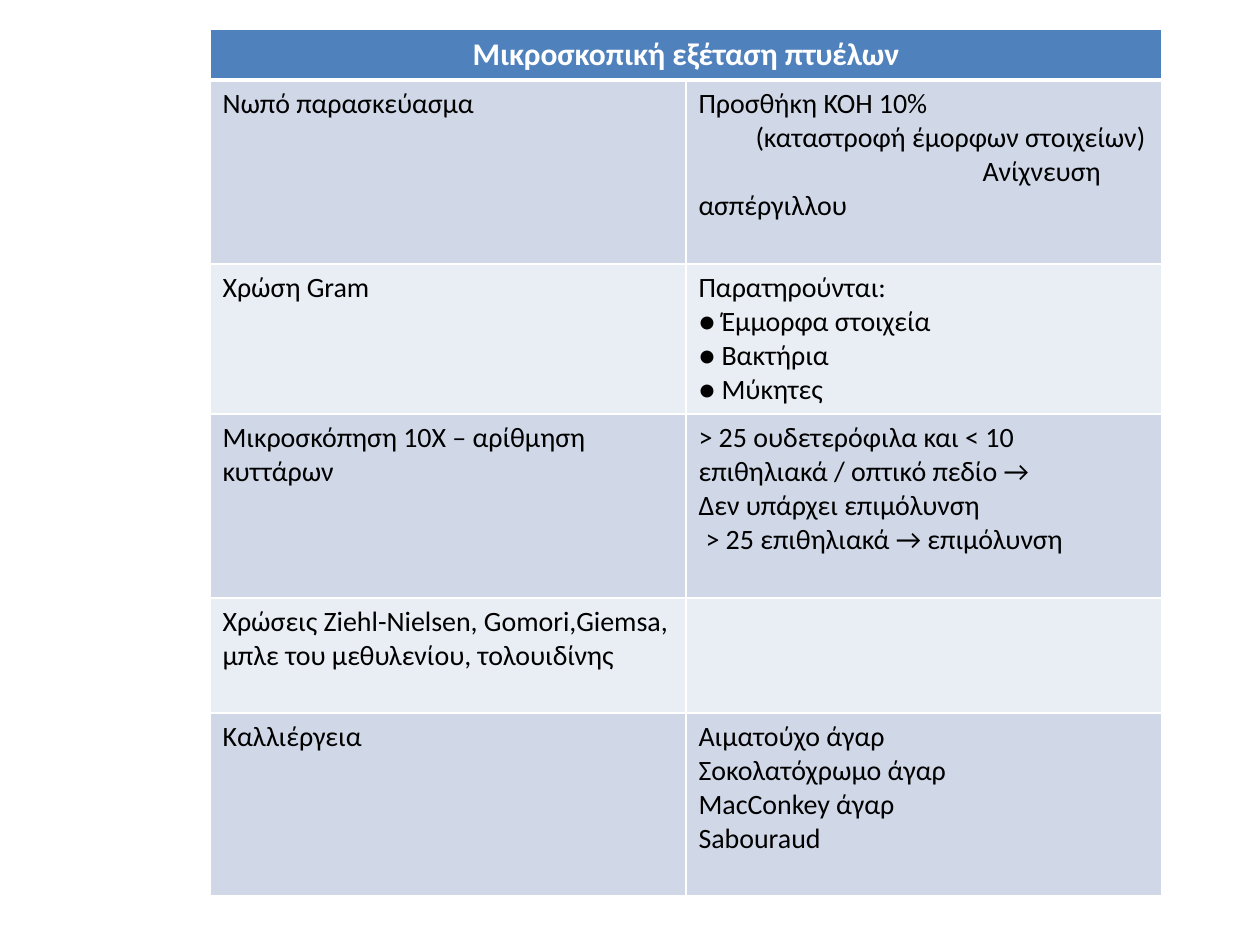
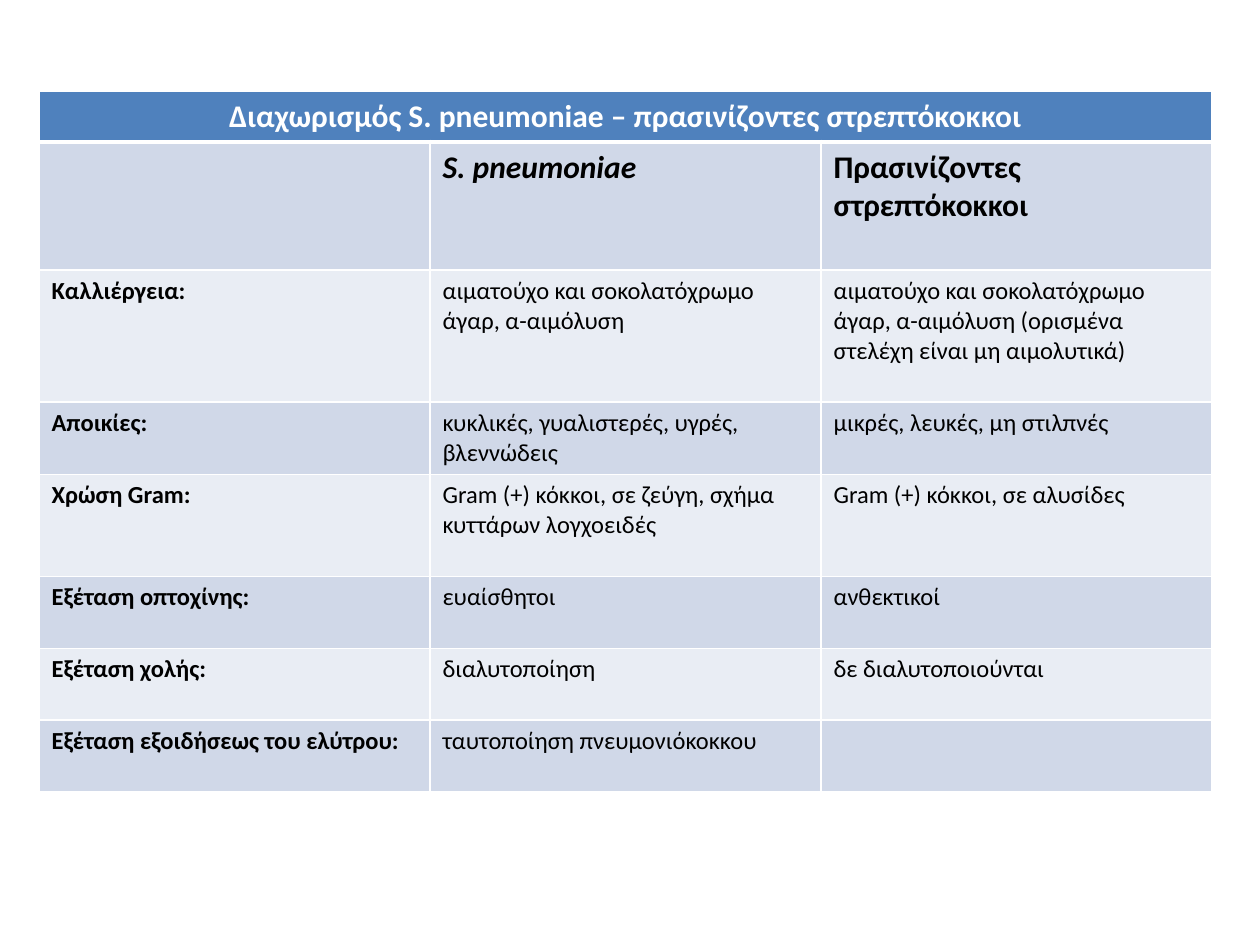
from dataclasses import dataclass
from typing import Optional

from lxml.etree import SubElement
from pptx import Presentation
from pptx.dml.color import RGBColor
from pptx.enum.text import PP_ALIGN as Align
from pptx.oxml.ns import qn
from pptx.util import Emu, Pt

# Scale and shared look
EMU_PER_PX = 914400 / 126
FONT = "Calibri"
WHITE = RGBColor(0xFF, 0xFF, 0xFF)
BLACK = RGBColor(0x00, 0x00, 0x00)
HEADER_BLUE = RGBColor(0x4F, 0x81, 0xBD)
BAND_DARK = RGBColor(0xD0, 0xD8, 0xE8)
BAND_LIGHT = RGBColor(0xE9, 0xED, 0xF4)
THIN, THICK = 1, 3
BULLET_HANG = 23


@dataclass(frozen=True)
class Style:
    size: int
    bold: bool = False
    italic: bool = False
    color: RGBColor = BLACK
    align: Align = Align.LEFT


@dataclass(frozen=True)
class Line:
    text: str
    indent: int = 0
    bullet: bool = False


@dataclass(frozen=True)
class Entry:
    style: Style
    lines: tuple[Line, ...]


@dataclass(frozen=True)
class Row:
    height: int
    entries: tuple[Optional[Entry], ...]


@dataclass(frozen=True)
class Sheet:
    left: int
    top: int
    column_width: int
    title: str
    rows: tuple[Row, ...]


TITLE = Style(18, bold=True, color=WHITE, align=Align.CENTER)
EXAM = Style(16)
SPECIES = Style(18, bold=True, italic=True)
GROUP = Style(18, bold=True)
LABEL = Style(14, bold=True)
FINDING = Style(14)
HEADER_HEIGHT = 51


def px(length: int) -> Emu:
    return Emu(round(length * EMU_PER_PX))


def entry(style: Style, *lines: str | Line) -> Entry:
    return Entry(style, tuple(Line(l) if isinstance(l, str) else l for l in lines))


def exam(height: int, name: str, *details: str | Line) -> Row:
    return Row(height, (entry(EXAM, name), entry(EXAM, *details) if details else None))


def trait(height: int, name: str, *findings: str) -> Row:
    return Row(height, (entry(LABEL, name), *(entry(FINDING, f) for f in findings)))


# Content
SPUTUM = Sheet(210, 29, 476, "Μικροσκοπική εξέταση πτυέλων", (
    exam(184, "Νωπό παρασκεύασμα",
         "Προσθήκη ΚΟΗ 10%",
         Line("(καταστροφή έμορφων στοιχείων)", indent=57),
         Line("Ανίχνευση ασπέργιλλου", indent=284)),
    exam(150, "Χρώση Gram",
         "Παρατηρούνται:",
         Line("Έμμορφα στοιχεία", bullet=True),
         Line("Βακτήρια", bullet=True),
         Line("Μύκητες", bullet=True)),
    exam(184, "Μικροσκόπηση 10Χ – αρίθμηση κυττάρων",
         "> 25 ουδετερόφιλα και < 10 επιθηλιακά / οπτικό πεδίο →",
         "Δεν υπάρχει επιμόλυνση",
         Line("> 25 επιθηλιακά → επιμόλυνση", indent=7)),
    exam(115, "Χρώσεις Ziehl-Nielsen, Gomori,Giemsa, μπλε του μεθυλενίου, τολουιδίνης"),
    exam(183, "Καλλιέργεια",
         "Αιματούχο άγαρ", "Σοκολατόχρωμο άγαρ", "MacConkey άγαρ", "Sabouraud"),
))

STREPTOCOCCI = Sheet(39, 91, 391, "Διαχωρισμός S. pneumoniae – πρασινίζοντες στρεπτόκοκκοι", (
    Row(128, (None, entry(SPECIES, "S. pneumoniae"),
              entry(GROUP, "Πρασινίζοντες στρεπτόκοκκοι"))),
    trait(132, "Καλλιέργεια:",
          "αιματούχο και σοκολατόχρωμο άγαρ, α-αιμόλυση",
          "αιματούχο και σοκολατόχρωμο άγαρ, α-αιμόλυση (ορισμένα στελέχη είναι μη αιμολυτικά)"),
    trait(72, "Αποικίες:",
          "κυκλικές, γυαλιστερές, υγρές, βλεννώδεις", "μικρές, λευκές, μη στιλπνές"),
    trait(102, "Χρώση Gram:",
          "Gram (+) κόκκοι, σε ζεύγη, σχήμα κυττάρων λογχοειδές",
          "Gram (+) κόκκοι, σε αλυσίδες"),
    trait(72, "Εξέταση οπτοχίνης:", "ευαίσθητοι", "ανθεκτικοί"),
    trait(72, "Εξέταση χολής:", "διαλυτοποίηση", "δε διαλυτοποιούνται"),
    trait(72, "Εξέταση εξοιδήσεως του ελύτρου:", "ταυτοποίηση πνευμονιόκοκκου"),
))


# Drawing
def set_borders(cell, top: int, bottom: int) -> None:
    properties = cell._tc.get_or_add_tcPr()
    sides = (("a:lnL", THIN), ("a:lnR", THIN), ("a:lnT", top), ("a:lnB", bottom))
    for position, (side, width) in enumerate(sides):
        edge = SubElement(properties, qn(side), w=str(Pt(width)))
        fill = SubElement(edge, qn("a:solidFill"))
        SubElement(fill, qn("a:srgbClr"), val=str(WHITE))
        properties.insert(position, edge)


def set_indent(paragraph, line: Line) -> None:
    properties = paragraph._p.get_or_add_pPr()
    hang = BULLET_HANG if line.bullet else 0
    properties.set("marL", str(px(hang)))
    properties.set("indent", str(px(line.indent - hang)))
    if line.bullet:
        SubElement(properties, qn("a:buFont"), typeface=FONT)
        SubElement(properties, qn("a:buChar"), char="●")


def write(cell, content: Entry) -> None:
    style = content.style
    frame = cell.text_frame
    for number, line in enumerate(content.lines):
        paragraph = frame.add_paragraph() if number else frame.paragraphs[0]
        paragraph.alignment = style.align
        if line.indent or line.bullet:
            set_indent(paragraph, line)
        run = paragraph.add_run()
        run.text = line.text
        font = run.font
        font.name, font.size = FONT, Pt(style.size)
        font.bold, font.italic = style.bold, style.italic
        font.color.rgb = style.color


def draw_sheet(deck, sheet: Sheet) -> None:
    slide = deck.slides.add_slide(deck.slide_layouts[6])
    column_count = len(sheet.rows[0].entries)
    title_row = Row(HEADER_HEIGHT, (entry(TITLE, sheet.title),))
    rows = (title_row, *sheet.rows)
    table = slide.shapes.add_table(
        len(rows), column_count, px(sheet.left), px(sheet.top),
        px(sheet.column_width * column_count), px(sum(row.height for row in rows))).table
    for column in table.columns:
        column.width = px(sheet.column_width)
    table.cell(0, 0).merge(table.cell(0, column_count - 1))

    for number, row in enumerate(rows):
        table.rows[number].height = px(row.height)
        band = BAND_DARK if number % 2 else BAND_LIGHT
        for column in range(column_count):
            cell = table.cell(number, column)
            cell.fill.solid()
            cell.fill.fore_color.rgb = band if number else HEADER_BLUE
            set_borders(cell, THICK if number == 1 else THIN, THIN if number else THICK)
            if column < len(row.entries) and row.entries[column]:
                write(cell, row.entries[column])


def main() -> None:
    deck = Presentation()
    deck.slide_width, deck.slide_height = px(1260), px(945)
    for sheet in (SPUTUM, STREPTOCOCCI):
        draw_sheet(deck, sheet)
    deck.save("out.pptx")


if __name__ == "__main__":
    main()
